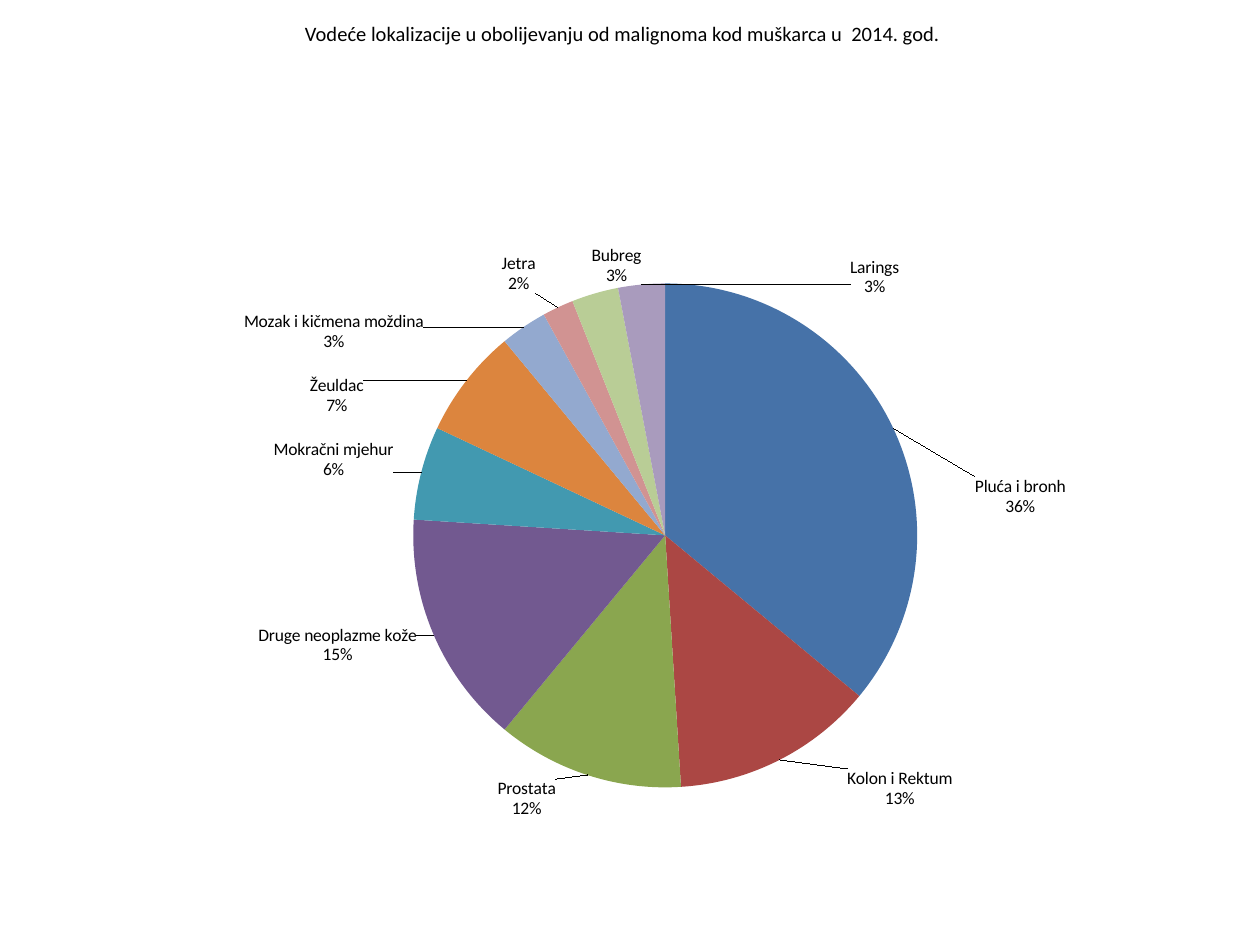
from math import copysign, cos, pi, sin

from pptx import Presentation
from pptx.chart.data import CategoryChartData
from pptx.dml.color import RGBColor
from pptx.enum.chart import XL_CHART_TYPE
from pptx.enum.text import MSO_ANCHOR, PP_ALIGN
from pptx.oxml import parse_xml
from pptx.oxml.ns import nsdecls, qn
from pptx.util import Inches, Pt

FONT = "Calibri"
COLORS = {
    "text": "000000",
    "blue": "4672A8", "red": "AB4744", "green": "8AA64F",
    "purple": "725990", "teal": "4299B0", "orange": "DC853E",
    "light blue": "93A9CF", "light red": "D19392",
    "light green": "B9CD96", "light purple": "A99BBD",
}

# Site, percent, colour, label centre x, label centre y, label width (inches)
SITES = [
    ("Pluća i bronh", 36, "blue", 8.10, 3.94, 0.72),
    ("Kolon i Rektum", 13, "red", 7.14, 6.26, 0.83),
    ("Prostata", 12, "green", 4.18, 6.34, 0.46),
    ("Druge neoplazme kože", 15, "purple", 2.68, 5.12, 1.25),
    ("Mokračni mjehur", 6, "teal", 2.65, 3.65, 0.94),
    ("Žeuldac", 7, "orange", 2.67, 3.14, 0.43),
    ("Mozak i kičmena moždina", 3, "light blue", 2.65, 2.63, 1.42),
    ("Jetra", 2, "light red", 4.11, 2.17, 0.28),
    ("Bubreg", 3, "light green", 4.89, 2.11, 0.40),
    ("Larings", 3, "light purple", 6.94, 2.20, 0.39),
]
CHART_LEFT, CHART_TOP, CHART_WIDTH, CHART_HEIGHT = 0.5, 1.75, 9, 4.95
PIE_X, PIE_Y, PIE_RADIUS = 5.28, 4.25, 2
LABEL_HEIGHT = 0.31
LABEL_GAP = 0.06


def rgb(color):
    return RGBColor.from_string(COLORS[color])


def style_font(font, size, color="text"):
    font.name = FONT
    font.size = Pt(size)
    font.bold = False
    font.color.rgb = rgb(color)


def write_text(shape, text, size, color="text", align=PP_ALIGN.CENTER,
               anchor=MSO_ANCHOR.TOP):
    frame = shape.text_frame
    frame.word_wrap = True
    frame.vertical_anchor = anchor
    frame.margin_top = 0
    paragraph = frame.paragraphs[0]
    paragraph.alignment = align
    run = paragraph.add_run()
    run.text = text
    style_font(run.font, size, color)


def add_title(slide):
    title = slide.shapes.title
    title.left, title.top = Inches(0.5), Inches(0.17)
    title.width, title.height = Inches(8.88), Inches(1.25)
    write_text(title, "Vodeće lokalizacije u obolijevanju od malignoma "
                      "kod muškarca u  2014. god.", size=11.7)


def fix_pie_area(chart):
    """Give the pie a fixed place inside the chart frame."""
    plot_area = chart._chartSpace.find(".//" + qn("c:plotArea"))
    for layout in plot_area.findall(qn("c:layout")):
        plot_area.remove(layout)
    x = (PIE_X - PIE_RADIUS - CHART_LEFT) / CHART_WIDTH
    y = (PIE_Y - PIE_RADIUS - CHART_TOP) / CHART_HEIGHT
    plot_area.insert(0, parse_xml(
        f'<c:layout {nsdecls("c")}><c:manualLayout>'
        '<c:layoutTarget val="inner"/>'
        '<c:xMode val="edge"/><c:yMode val="edge"/>'
        f'<c:x val="{x:.4f}"/><c:y val="{y:.4f}"/>'
        f'<c:w val="{2 * PIE_RADIUS / CHART_WIDTH:.4f}"/>'
        f'<c:h val="{2 * PIE_RADIUS / CHART_HEIGHT:.4f}"/>'
        '</c:manualLayout></c:layout>'))


def label_offset(angle, center_x, center_y, width):
    """Shift from the default place outside the slice, as chart fractions."""
    reach = PIE_RADIUS + LABEL_GAP
    default_x = PIE_X + reach * sin(angle) + copysign(width / 2, sin(angle))
    default_y = PIE_Y - reach * cos(angle) - copysign(LABEL_HEIGHT / 2, cos(angle))
    return ((center_x - default_x) / CHART_WIDTH,
            (center_y - default_y) / CHART_HEIGHT)


def site_label(index, x, y):
    return parse_xml(
        f'<c:dLbl {nsdecls("c")}><c:idx val="{index}"/>'
        f'<c:layout><c:manualLayout><c:x val="{x:.4f}"/><c:y val="{y:.4f}"/>'
        '</c:manualLayout></c:layout><c:dLblPos val="outEnd"/>'
        '<c:showLegendKey val="0"/><c:showVal val="0"/>'
        '<c:showCatName val="1"/><c:showSerName val="0"/>'
        '<c:showPercent val="1"/><c:showBubbleSize val="0"/>'
        '<c:separator>\n</c:separator></c:dLbl>')


def add_pie(slide):
    data = CategoryChartData()
    data.categories = [site[0] for site in SITES]
    data.add_series("Series 1", [site[1] for site in SITES])
    chart = slide.shapes.add_chart(
        XL_CHART_TYPE.PIE, Inches(CHART_LEFT), Inches(CHART_TOP),
        Inches(CHART_WIDTH), Inches(CHART_HEIGHT), data).chart
    chart.has_title = False
    chart.has_legend = False
    style_font(chart.font, 10)
    fix_pie_area(chart)

    plot = chart.plots[0]
    plot.vary_by_categories = True
    series = plot.series[0]
    labels = series.data_labels
    labels.show_value = False
    labels.show_category_name = True
    labels.show_percentage = True

    total = sum(site[1] for site in SITES)
    passed = 0
    for index, (_, percent, color, x, y, width) in enumerate(SITES):
        fill = series.points[index].format.fill
        fill.solid()
        fill.fore_color.rgb = rgb(color)
        middle = 2 * pi * (passed + percent / 2) / total
        passed += percent
        offset = label_offset(middle, x, y, width)
        labels._element.insert(index, site_label(index, *offset))


def main():
    deck = Presentation()
    deck.slide_width, deck.slide_height = Inches(10), Inches(7.5)
    slide = deck.slides.add_slide(deck.slide_layouts[5])
    add_title(slide)
    add_pie(slide)
    deck.save("out.pptx")


if __name__ == "__main__":
    main()
